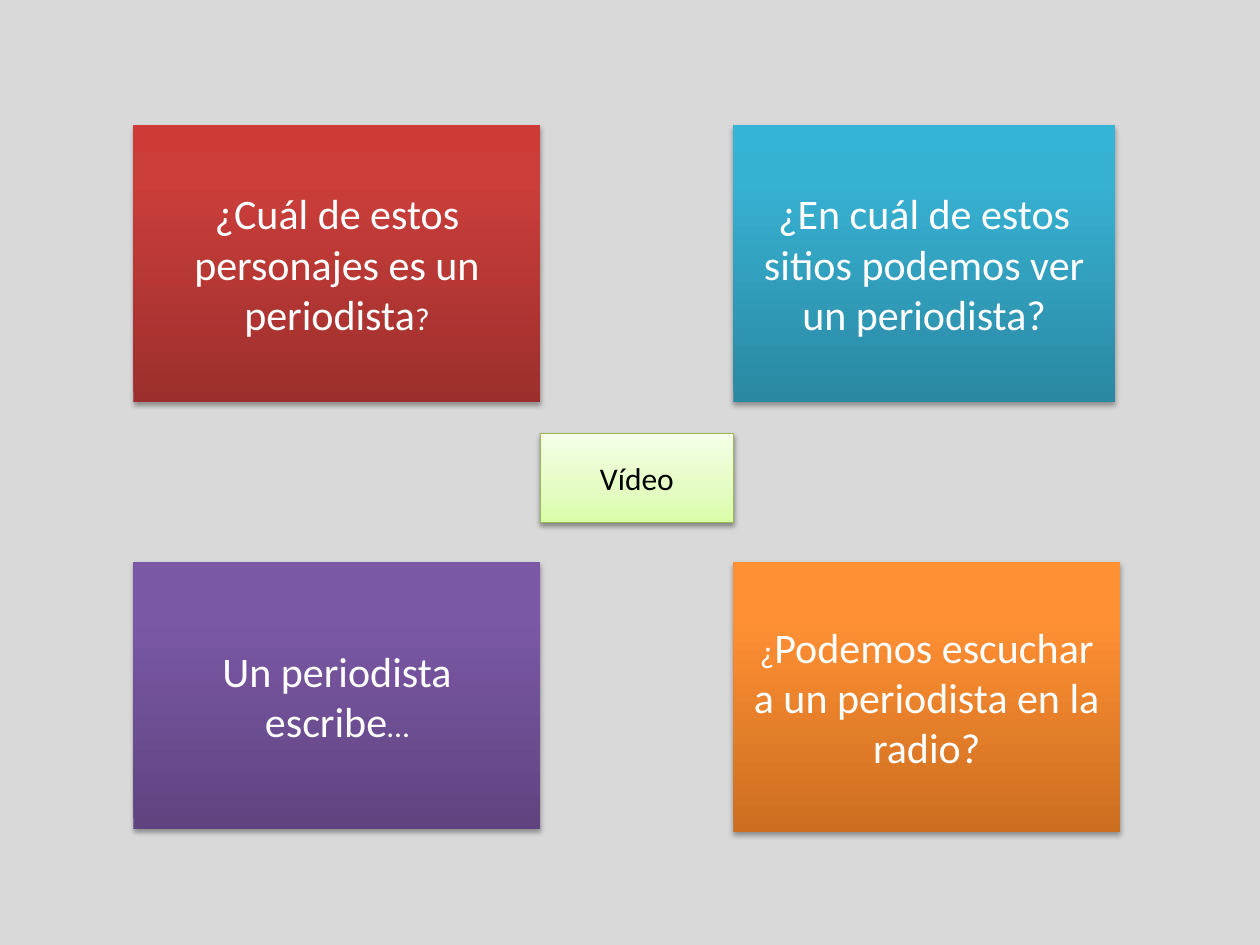
from copy import deepcopy

from lxml import etree
from pptx import Presentation
from pptx.dml.color import RGBColor
from pptx.enum.shapes import MSO_SHAPE
from pptx.enum.text import MSO_ANCHOR, PP_ALIGN
from pptx.oxml.ns import qn
from pptx.util import Inches, Pt

RECTANGLE = MSO_SHAPE.RECTANGLE
MIDDLE = MSO_ANCHOR.MIDDLE
CENTER = PP_ALIGN.CENTER

COLORS = {
    "background": "D9D9D9",
    "white": "FFFFFF",
    "black": "000000",
    "green line": "98B955",
    "red": ["9C2F2D", "CB3E3A", "CE3B37"],
    "purple": ["5F4480", "7B58A6", "7C57A8"],
    "orange": ["CC6E20", "FF9034", "FF9136"],
    "blue": ["2A88A2", "37B1D2", "34B4D6"],
    "green": ["DAFDA7", "E4FCC2", "F5FFE7"],
}
LEFT, RIGHT = 1.06, 5.82
TOP, BOTTOM = 0.99, 4.46


def fill_gradient(shape, colors, middle_stop):
    shape.fill.gradient()
    shape.fill.gradient_angle = 90
    stop_list = shape.element.spPr.find(qn("a:gradFill")).find(qn("a:gsLst"))
    stop_list.append(deepcopy(stop_list[0]))
    for stop, color, position in zip(shape.fill.gradient_stops, colors, (0, middle_stop, 1)):
        stop.color.rgb = RGBColor.from_string(color)
        stop.position = position


def add_shadow(shape, opacity, distance):
    shape.shadow.inherit = False
    effects = shape.element.spPr.find(qn("a:effectLst"))
    shadow = etree.SubElement(
        effects, qn("a:outerShdw"), blurRad=str(Pt(3.1)), dist=str(Pt(distance)),
        dir="5400000", rotWithShape="0")
    color = etree.SubElement(shadow, qn("a:srgbClr"), val=COLORS["black"])
    etree.SubElement(color, qn("a:alpha"), val=str(opacity * 1000))


deck = Presentation()
deck.slide_width = Inches(10)
deck.slide_height = Inches(7.5)
page = deck.slides.add_slide(deck.slide_layouts[6])
page.background.fill.solid()
page.background.fill.fore_color.rgb = RGBColor.from_string(COLORS["background"])

question_style = (0.8, 35, 1.8, "white", None)
video_style = (0.35, 38, 1.6, "black", "green line")
cards = [
    ("red", LEFT, TOP, 3.23, 2.2, question_style,
     [("¿Cuál de estos personajes es un periodista", 24), ("?", 18)]),
    ("purple", LEFT, BOTTOM, 3.23, 2.12, question_style,
     [("Un periodista escribe", 24), ("…", 18)]),
    ("orange", RIGHT, BOTTOM, 3.07, 2.14, question_style,
     [("¿", 18), ("Podemos escuchar a un periodista en la radio?", 24)]),
    ("blue", RIGHT, TOP, 3.03, 2.2, question_style,
     [("¿En cuál de estos sitios podemos ver un periodista?", 24)]),
    ("green", 4.29, 3.44, 1.53, 0.71, video_style, [("Vídeo", 18)]),
]

for name, left, top, width, height, style, spans in cards:
    middle_stop, opacity, distance, text_color, line_color = style
    card = page.shapes.add_shape(
        RECTANGLE, Inches(left), Inches(top), Inches(width), Inches(height))
    fill_gradient(card, COLORS[name], middle_stop)
    if line_color:
        card.line.color.rgb = RGBColor.from_string(COLORS[line_color])
        card.line.width = Pt(0.75)
    else:
        card.line.fill.background()
    add_shadow(card, opacity, distance)
    card.text_frame.word_wrap = True
    card.text_frame.vertical_anchor = MIDDLE
    para = card.text_frame.paragraphs[0]
    para.alignment = CENTER
    for text, size in spans:
        span = para.add_run()
        span.text = text
        span.font.name = "Calibri"
        span.font.size = Pt(size)
        span.font.color.rgb = RGBColor.from_string(COLORS[text_color])

deck.save("out.pptx")
